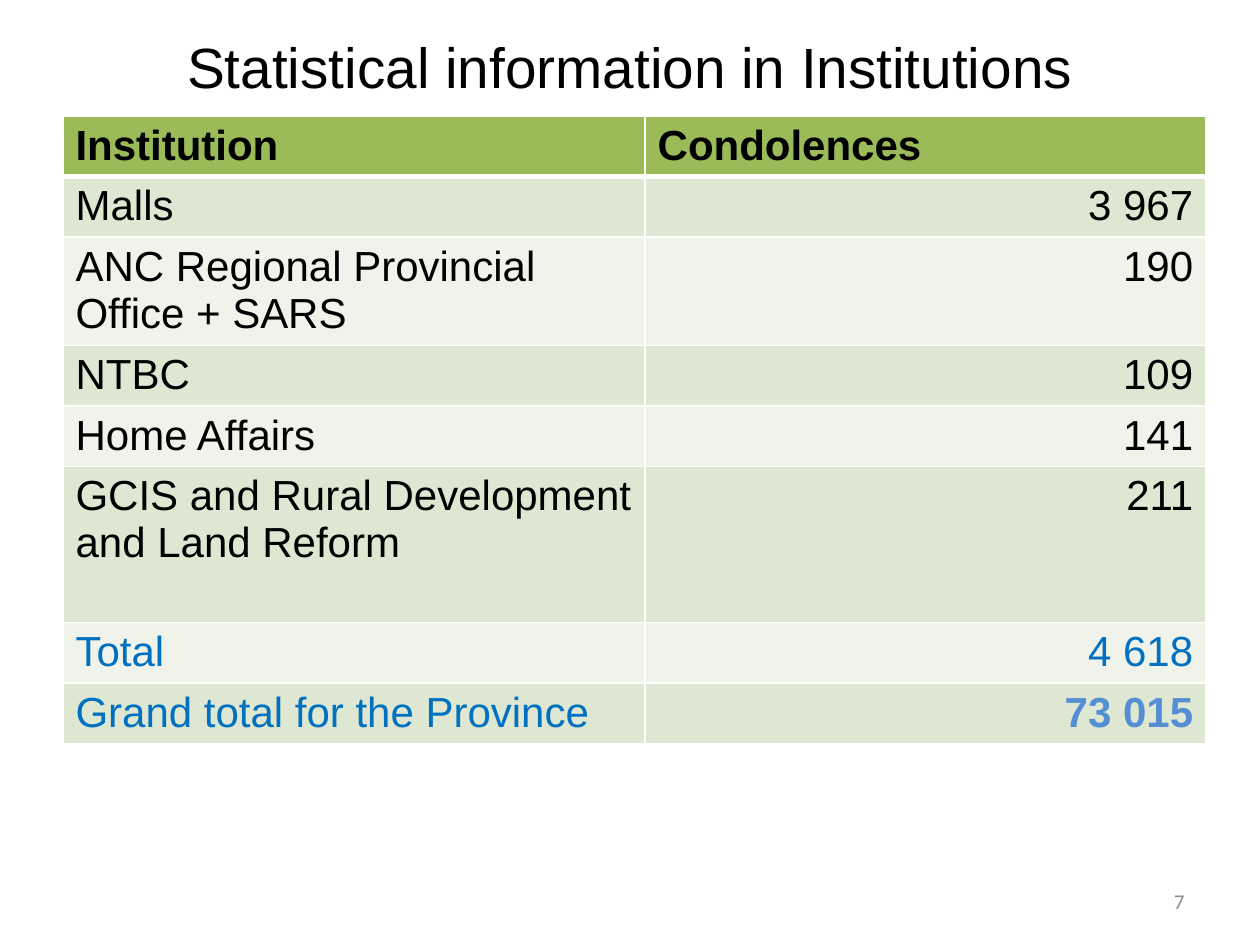
from dataclasses import dataclass
from typing import NamedTuple

from lxml import etree
from pptx import Presentation
from pptx.dml.color import RGBColor
from pptx.enum.text import MSO_ANCHOR, MSO_AUTO_SIZE, PP_ALIGN
from pptx.oxml.ns import qn
from pptx.util import Inches, Pt

LEFT, CENTER, RIGHT = PP_ALIGN.LEFT, PP_ALIGN.CENTER, PP_ALIGN.RIGHT
MIDDLE = MSO_ANCHOR.MIDDLE
NO_FIT = MSO_AUTO_SIZE.NONE
TITLE_ONLY = 5
SLIDE_W, SLIDE_H = 10, 7.5


@dataclass(frozen=True)
class Theme:
    font: str = "Arial"
    number_font: str = "Calibri"
    title_size: float = 32.4
    table_size: float = 24
    number_size: float = 12
    ink: str = "000000"
    total: str = "0070C0"
    grand_total: str = "558ED5"
    number: str = "8C8C8C"
    header: str = "9BBB59"
    bands: tuple[str, str] = ("DEE7D1", "EFF3EA")
    rule: str = "FFFFFF"
    thin: float = 1
    thick: float = 3


class Row(NamedTuple):
    institution: str
    condolences: str
    height: float = 0.48
    label_color: str = Theme.ink
    value_color: str = Theme.ink
    value_bold: bool = False


class Box(NamedTuple):
    x: float
    y: float
    w: float
    h: float

    def lengths(self) -> tuple[int, int, int, int]:
        return (Inches(self.x * SLIDE_W), Inches(self.y * SLIDE_H),
                Inches(self.w * SLIDE_W), Inches(self.h * SLIDE_H))


THEME = Theme()
TITLE_BOX = Box(0.05, 0.04, 0.9, 0.06)
TABLE_BOX = Box(0.05, 0.123, 0.907, 0.66)
NUMBER_BOX = Box(0.717, 0.927, 0.233, 0.053)
COLUMNS = (4.62, 4.45)
HEADER = ("Institution", "Condolences")
ROWS = (
    Row("Malls", "3 967"),
    Row("ANC Regional Provincial Office + SARS", "190", 0.86),
    Row("NTBC", "109"),
    Row("Home Affairs", "141"),
    Row("GCIS and Rural Development and Land Reform", "211", 1.24),
    Row("Total", "4 618", label_color=THEME.total, value_color=THEME.total),
    Row("Grand total for the Province", "73 015", label_color=THEME.total,
        value_color=THEME.grand_total, value_bold=True),
)


def write(tf, text: str, size: float, color: str, align=LEFT,
          bold: bool = False, font: str = THEME.font) -> None:
    p = tf.paragraphs[0]
    p.alignment = align
    r = p.add_run()
    r.text = text
    for name, value in {"name": font, "size": Pt(size), "bold": bold}.items():
        setattr(r.font, name, value)
    r.font.color.rgb = RGBColor.from_string(color)


def set_frame(tf) -> None:
    settings = {"word_wrap": True, "auto_size": NO_FIT, "vertical_anchor": MIDDLE}
    for name, value in settings.items():
        setattr(tf, name, value)


def set_borders(cell, top: float, bottom: float) -> None:
    tc_pr = cell._tc.get_or_add_tcPr()
    widths = {"L": THEME.thin, "R": THEME.thin, "T": top, "B": bottom}
    for side, width in widths.items():
        ln = etree.SubElement(tc_pr, qn(f"a:ln{side}"), w=str(Pt(width)))
        fill = etree.SubElement(ln, qn("a:solidFill"))
        etree.SubElement(fill, qn("a:srgbClr"), val=THEME.rule)


def set_cell(cell, text: str, fill: str, color: str, align=LEFT, bold: bool = False,
             top: float = THEME.thin, bottom: float = THEME.thin) -> None:
    set_borders(cell, top, bottom)
    cell.fill.solid()
    cell.fill.fore_color.rgb = RGBColor.from_string(fill)
    write(cell.text_frame, text, THEME.table_size, color, align, bold)


def add_title(slide, text: str) -> None:
    sp = slide.shapes.title
    sp.left, sp.top, sp.width, sp.height = TITLE_BOX.lengths()
    set_frame(sp.text_frame)
    write(sp.text_frame, text, THEME.title_size, THEME.ink, CENTER)


def add_condolences(slide) -> None:
    table = slide.shapes.add_table(
        len(ROWS) + 1, len(COLUMNS), *TABLE_BOX.lengths()).table
    for column, width in zip(table.columns, COLUMNS):
        column.width = Inches(width)
    table.rows[0].height = Inches(0.48)
    for j, text in enumerate(HEADER):
        set_cell(table.cell(0, j), text, THEME.header, THEME.ink,
                 bold=True, bottom=THEME.thick)
    for i, row in enumerate(ROWS, start=1):
        table.rows[i].height = Inches(row.height)
        fill = THEME.bands[(i - 1) % 2]
        top = THEME.thick if i == 1 else THEME.thin
        set_cell(table.cell(i, 0), row.institution, fill, row.label_color, top=top)
        set_cell(table.cell(i, 1), row.condolences, fill, row.value_color,
                 RIGHT, row.value_bold, top)


def add_number(slide, text: str) -> None:
    sp = slide.shapes.add_textbox(*NUMBER_BOX.lengths())
    set_frame(sp.text_frame)
    write(sp.text_frame, text, THEME.number_size, THEME.number, RIGHT,
          font=THEME.number_font)


def main() -> None:
    prs = Presentation()
    prs.slide_width, prs.slide_height = Inches(SLIDE_W), Inches(SLIDE_H)
    slide = prs.slides.add_slide(prs.slide_layouts[TITLE_ONLY])
    add_title(slide, "Statistical information in Institutions")
    add_condolences(slide)
    add_number(slide, "7")
    prs.save("out.pptx")


if __name__ == "__main__":
    main()
